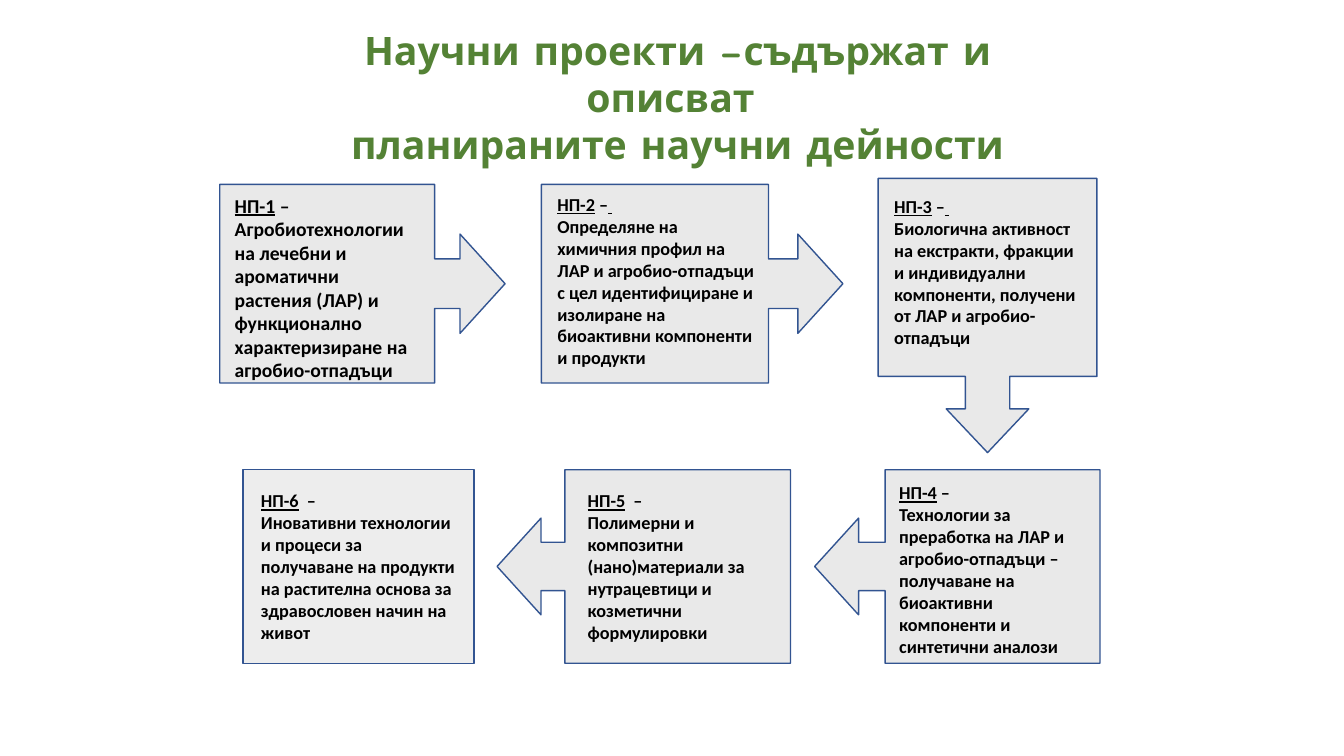
from dataclasses import dataclass

import lxml.etree
import pptx
import pptx.dml.color
import pptx.enum.shapes
import pptx.enum.text
import pptx.oxml.ns
import pptx.util

Inches = pptx.util.Inches
Pt = pptx.util.Pt
Shape = pptx.enum.shapes.MSO_SHAPE


@dataclass(frozen=True)
class Theme:
    title_font: str = "Comic Neue"
    body_font: str = "Calibri"
    title_color: str = "548235"
    text_color: str = "000000"
    callout_fill: str = "C9C9C9"
    process_fill: str = "EDEDED"
    outline: str = "325491"
    callout_opacity: int = 40
    title_size: int = 28
    first_size: int = 14
    body_size: int = 13
    outline_width: int = 1


@dataclass(frozen=True)
class Box:
    left: float
    top: float
    width: float
    height: float

    def inner(self, dx, dy, width, height):
        return Box(self.left + dx, self.top + dy, width, height)

    def lengths(self):
        return [Inches(value) for value in (self.left, self.top, self.width, self.height)]


@dataclass(frozen=True)
class Project:
    code: str
    dash: str
    text: str
    kind: object
    box: Box
    text_box: Box  # left and top count from the corner of box
    adjustments: tuple = ()
    size: int = 13
    inline: bool = False
    underlined_end: str = ""


THEME = Theme()
SIDEWAYS = (0.25, 0.25, 0.227, 0.753)
UPPER, LOWER = 1.83, 4.66
UPPER_HEIGHT, LOWER_HEIGHT = 1.97, 1.92

PROJECTS = [
    Project("НП-6", "  –",
            "Иновативни технологии и процеси за получаване на продукти "
            "на растителна основа за здравословен начин на живот",
            Shape.FLOWCHART_PROCESS, Box(2.41, LOWER, 2.29, LOWER_HEIGHT),
            Box(0.08, 0.15, 2.12, 1.63)),
    Project("НП-1", " – ",
            "Агробиотехнологии на лечебни и ароматични растения (ЛАР) "
            "и функционално характеризиране на агробио-отпадъци",
            Shape.RIGHT_ARROW_CALLOUT, Box(2.18, UPPER, 2.83, UPPER_HEIGHT),
            Box(0.05, 0.04, 2, 1.99), SIDEWAYS, THEME.first_size, inline=True),
    Project("НП-2", " –",
            "Определяне на химичния профил на ЛАР и агробио-отпадъци с цел "
            "идентифициране и изолиране на биоактивни компоненти и продукти",
            Shape.RIGHT_ARROW_CALLOUT, Box(5.37, UPPER, 2.99, UPPER_HEIGHT),
            Box(0.06, 0.04, 2.2, 1.85), SIDEWAYS, underlined_end=" "),
    Project("НП-3", " –",
            "Биологична активност на екстракти, фракции и индивидуални "
            "компоненти, получени от ЛАР и агробио-отпадъци",
            Shape.DOWN_ARROW_CALLOUT, Box(8.71, 1.77, 2.17, 2.72),
            Box(0.06, 0.12, 2.05, 1.63), (0.203, 0.189, 0.2, 0.722),
            underlined_end=" "),
    Project("НП-4", " –",
            "Технологии за преработка на ЛАР и агробио-отпадъци – получаване "
            "на биоактивни компоненти и синтетични аналози",
            Shape.LEFT_ARROW_CALLOUT, Box(8.08, LOWER, 2.83, LOWER_HEIGHT),
            Box(0.74, 0.07, 2.01, 1.85), SIDEWAYS),
    Project("НП-5", "  –",
            "Полимерни и композитни  (нано)материали за нутрацевтици "
            "и козметични формулировки",
            Shape.LEFT_ARROW_CALLOUT, Box(4.93, LOWER, 2.91, LOWER_HEIGHT),
            Box(0.8, 0.15, 2.12, 1.63), (0.25, 0.25, 0.227, 0.769)),
]


def rgb(value):
    return pptx.dml.color.RGBColor.from_string(value)


def set_opacity(shape, percent):
    color = shape.fill._xPr.find(".//" + pptx.oxml.ns.qn("a:srgbClr"))
    alpha = lxml.etree.SubElement(color, pptx.oxml.ns.qn("a:alpha"))
    alpha.set("val", str(percent * 1000))


def add_span(para, text, font, size, color, underline=False):
    span = para.add_run()
    span.text = text
    span.font.name = font
    span.font.size = Pt(size)
    span.font.bold = True
    span.font.underline = underline
    span.font.color.rgb = rgb(color)


def add_text_frame(page, box):
    frame = page.shapes.add_textbox(*box.lengths()).text_frame
    frame.word_wrap = True
    return frame


def draw_outline(page, project):
    shape = page.shapes.add_shape(project.kind, *project.box.lengths())
    shape.shadow.inherit = False
    is_callout = bool(project.adjustments)
    shape.fill.solid()
    shape.fill.fore_color.rgb = rgb(THEME.callout_fill if is_callout else THEME.process_fill)
    if is_callout:
        set_opacity(shape, THEME.callout_opacity)
    shape.line.color.rgb = rgb(THEME.outline)
    shape.line.width = Pt(THEME.outline_width)
    for index, value in enumerate(project.adjustments):
        shape.adjustments[index] = value


def draw_project(page, project):
    """Draw the outline of a project and its text over it."""
    draw_outline(page, project)
    place = project.text_box
    frame = add_text_frame(
        page, project.box.inner(place.left, place.top, place.width, place.height))
    style = (THEME.body_font, project.size, THEME.text_color)
    para = frame.paragraphs[0]
    add_span(para, project.code, *style, underline=True)
    add_span(para, project.dash, *style)
    if project.underlined_end:
        add_span(para, project.underlined_end, *style, underline=True)
    if not project.inline:
        para = frame.add_paragraph()
    add_span(para, project.text, *style)


def draw_title(page, box, lines):
    frame = add_text_frame(page, box)
    frame.text = "\n".join(lines)
    for para in frame.paragraphs:
        para.alignment = pptx.enum.text.PP_ALIGN.CENTER
        for span in para.runs:
            span.font.name = THEME.title_font
            span.font.size = Pt(THEME.title_size)
            span.font.bold = True
            span.font.color.rgb = rgb(THEME.title_color)


def main():
    deck = pptx.Presentation()
    deck.slide_width, deck.slide_height = Inches(13.33), Inches(7.5)
    page = deck.slides.add_slide(deck.slide_layouts[6])
    for project in PROJECTS:
        draw_project(page, project)
    draw_title(page, Box(2.86, 0.21, 7.72, 1.04),
               ["Научни проекти –съдържат и описват ", "планираните научни дейности"])
    deck.save("out.pptx")


if __name__ == "__main__":
    main()
